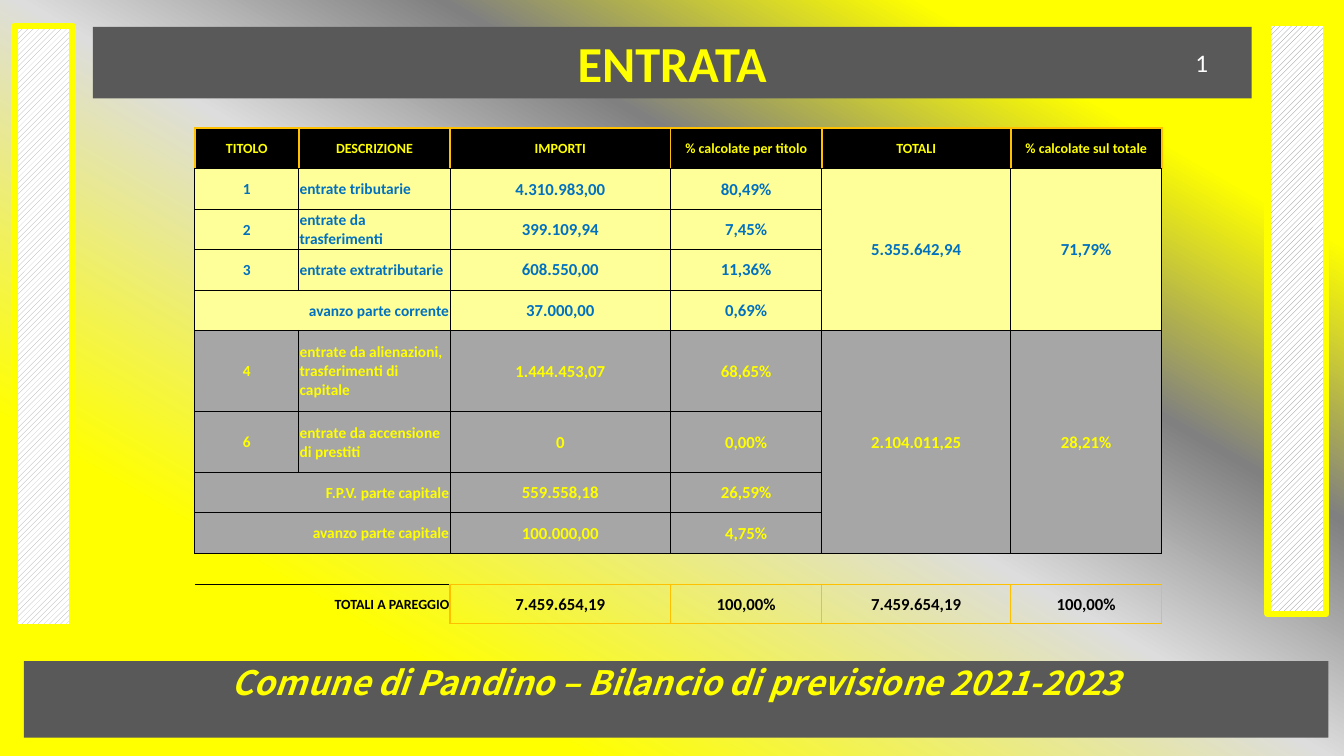
from dataclasses import dataclass

import pptx
import pptx.util
import pptx.oxml
import pptx.oxml.ns
import pptx.dml.color
import pptx.enum.dml
import pptx.enum.shapes
import pptx.enum.text
from pptx.util import Cm

TITLE = "ENTRATA"
FOOTER = "Comune di Pandino – Bilancio di previsione 2021-2023"
PAGE_NUMBER = "1"

HEADER = ("TITOLO", "DESCRIZIONE", "IMPORTI", "% calcolate per titolo", "TOTALI", "% calcolate sul totale")
CURRENT = [
    ("1", "entrate tributarie", "4.310.983,00", "80,49%", "5.355.642,94", "71,79%"),
    ("2", "entrate da trasferimenti", "399.109,94", "7,45%"),
    ("3", "entrate extratributarie", "608.550,00", "11,36%"),
    ("avanzo parte corrente", "", "37.000,00", "0,69%"),
]
CAPITAL = [
    ("4", "entrate da alienazioni, trasferimenti di capitale", "1.444.453,07", "68,65%", "2.104.011,25", "28,21%"),
    ("6", "entrate da accensione di prestiti", "0", "0,00%"),
    ("F.P.V. parte capitale", "", "559.558,18", "26,59%"),
    ("avanzo parte capitale", "", "100.000,00", "4,75%"),
]
BALANCE = ("TOTALI A PAREGGIO", "", "7.459.654,19", "100,00%", "7.459.654,19", "100,00%")

COLUMN_WIDTHS = (2.62, 3.81, 5.56, 3.81, 4.76, 3.81)
ROW_HEIGHTS = (1.02, 1.02, 1.02, 1.02, 1.02, 2.04, 1.53, 1.02, 1.02, 0.78, 0.97)
SIDE_BARS = [((0.36, 0.66, 1.47, 15.14), "A6A6A6"), ((31.95, 0.56, 1.47, 14.91), "808080")]


@dataclass(frozen=True)
class Theme:
    font: str = "Calibri"
    footer_font: str = "Noto Sans CJK KR"
    yellow: str = "FFFF00"
    band: str = "595959"
    black: str = "000000"
    white: str = "FFFFFF"
    blue: str = "0070C0"
    orange: str = "FFC000"
    current: str = "FFFF99"
    capital: str = "A6A6A6"
    backdrop: tuple = ((16, "FFFF00"), (34, "808080"), (50, "DDDDDD"), (78, "FFFF00"))
    title_size: int = 36
    footer_size: int = 24
    number_size: int = 18
    small: int = 10
    label: int = 11
    amount: int = 12


THEME = Theme()
ALIGN = pptx.enum.text.PP_ALIGN
MIDDLE = pptx.enum.text.MSO_ANCHOR.MIDDLE
LAST_COLUMN = len(HEADER) - 1
CURRENT_START = 1
CAPITAL_START = CURRENT_START + len(CURRENT)
SPACER = CAPITAL_START + len(CAPITAL)
TOTAL = SPACER + 1


def rgb(code):
    return pptx.dml.color.RGBColor.from_string(code)


def place(shape, left, top, width, height):
    shape.left, shape.top, shape.width, shape.height = Cm(left), Cm(top), Cm(width), Cm(height)


def write(frame, text, size, color, align=ALIGN.CENTER, font=THEME.font, bold=True):
    para = frame.paragraphs[0]
    para.alignment = align
    span = para.add_run()
    span.text = text
    span.font.name = font
    span.font.size = pptx.util.Pt(size)
    span.font.bold = bold
    span.font.color.rgb = rgb(color)
    return para, span


def paint_background(page):
    page.background.fill.solid()
    stops = "".join(
        f'<a:gs pos="{pos * 1000}"><a:srgbClr val="{color}"/></a:gs>' for pos, color in THEME.backdrop
    )
    gradient = pptx.oxml.parse_xml(
        f'<a:gradFill {pptx.oxml.ns.nsdecls("a")} rotWithShape="1"><a:gsLst>{stops}</a:gsLst>'
        '<a:lin ang="7200000" scaled="0"/></a:gradFill>'
    )
    solid = page.element.xpath(".//p:bgPr/a:solidFill")[0]
    solid.getparent().replace(solid, gradient)


def fill_band(shape):
    shape.fill.solid()
    shape.fill.fore_color.rgb = rgb(THEME.band)
    shape.text_frame.word_wrap = True
    shape.text_frame.auto_size = pptx.enum.text.MSO_AUTO_SIZE.NONE


def add_bands(page):
    title, footer = page.placeholders
    place(title, 2.34, 0.68, 29.2, 1.8)
    fill_band(title)
    title.text_frame.vertical_anchor = MIDDLE
    write(title.text_frame, TITLE, THEME.title_size, THEME.yellow)

    place(footer, 0.6, 16.66, 32.88, 1.93)
    fill_band(footer)
    footer.text_frame.vertical_anchor = pptx.enum.text.MSO_ANCHOR.TOP
    para, span = write(footer.text_frame, FOOTER, THEME.footer_size, THEME.yellow, font=THEME.footer_font)
    span.font.italic = True
    para.line_spacing = 0.9
    para.space_before = pptx.util.Pt(10)
    settings = para._p.get_or_add_pPr()
    settings.set("marL", "0")
    settings.set("indent", "0")
    settings.append(pptx.oxml.parse_xml(f'<a:buNone {pptx.oxml.ns.nsdecls("a")}/>'))


def add_side_bar(page, box, hatch):
    bar = page.shapes.add_shape(pptx.enum.shapes.MSO_SHAPE.RECTANGLE, *map(Cm, box))
    bar.shadow.inherit = False
    bar.fill.patterned()
    bar.fill.pattern = pptx.enum.dml.MSO_PATTERN.WIDE_UPWARD_DIAGONAL
    bar.fill.fore_color.rgb = rgb(hatch)
    bar.fill.back_color.rgb = rgb(THEME.white)
    bar.line.color.rgb = rgb(THEME.yellow)
    bar.line.width = pptx.util.Pt(4.75)


def cell_edges(row, column):
    black, orange = (THEME.black, 1), (THEME.orange, 1)
    if row == 0:
        heavy = (THEME.orange, 1.5)
        return {"L": heavy, "R": heavy, "T": heavy, "B": black}
    if row == SPACER:
        return {"T": black, "B": orange} if column > 1 else {"T": black}
    if row == TOTAL:
        return dict.fromkeys("LRTB", orange) if column > 1 else {"R": orange}
    thin = (THEME.black, 0.5)
    first = row in (CURRENT_START, CAPITAL_START)
    last = row in (CAPITAL_START - 1, SPACER - 1) or column > 3
    return {
        "L": black if column == 0 else thin,
        "R": black if column == LAST_COLUMN else thin,
        "T": black if first else thin,
        "B": black if last else thin,
    }


def draw_edges(cell, edges):
    properties = cell._tc.get_or_add_tcPr()
    for index, (side, (color, width)) in enumerate(edges.items()):
        properties.insert(index, pptx.oxml.parse_xml(
            f'<a:ln{side} {pptx.oxml.ns.nsdecls("a")} w="{int(width * 12700)}">'
            f'<a:solidFill><a:srgbClr val="{color}"/></a:solidFill></a:ln{side}>'
        ))


def row_colors(row):
    if row == 0:
        return THEME.black, THEME.yellow
    if row < CAPITAL_START:
        return THEME.current, THEME.blue
    if row < SPACER:
        return THEME.capital, THEME.yellow
    return None, THEME.black


def fill_cell(cell, row, column, text):
    fill, color = row_colors(row)
    cell.margin_left = cell.margin_right = cell.margin_top = Cm(0.02)
    cell.margin_bottom = 0
    cell.vertical_anchor = MIDDLE
    if fill:
        cell.fill.solid()
        cell.fill.fore_color.rgb = rgb(fill)
    else:
        cell.fill.background()
    if text:
        label_size = THEME.small if row == TOTAL else THEME.label
        size = THEME.small if row == 0 else label_size if column < 2 else THEME.amount
        align = ALIGN.CENTER
        if cell.is_merge_origin and column == 0:
            align = ALIGN.RIGHT
        elif row and column == 1:
            align = ALIGN.LEFT
        write(cell.text_frame, text, size, color, align)
    draw_edges(cell, cell_edges(row, column))


def add_budget_table(page):
    rows = [HEADER, *CURRENT, *CAPITAL, (), BALANCE]
    frame = page.shapes.add_table(
        len(rows), len(HEADER), Cm(4.91), Cm(3.23), Cm(sum(COLUMN_WIDTHS)), Cm(sum(ROW_HEIGHTS))
    )
    table = frame.table
    table.first_row = table.horz_banding = False
    table._tbl.xpath("./a:tblPr/a:tableStyleId")[0].text = "{2D5ABB26-0587-4C30-8999-92F81FD0307C}"
    for column, width in zip(table.columns, COLUMN_WIDTHS):
        column.width = Cm(width)
    for line, height in zip(table.rows, ROW_HEIGHTS):
        line.height = Cm(height)
    for start, group in ((CURRENT_START, CURRENT), (CAPITAL_START, CAPITAL)):
        for column in (4, 5):
            table.cell(start, column).merge(table.cell(start + len(group) - 1, column))
    for row, values in enumerate(rows):
        if values and not values[1]:
            table.cell(row, 0).merge(table.cell(row, 1))
        for column in range(len(HEADER)):
            cell = table.cell(row, column)
            if not cell.is_spanned:
                fill_cell(cell, row, column, values[column] if values else "")


def main():
    deck = pptx.Presentation()
    deck.slide_width, deck.slide_height = Cm(33.87), Cm(19.05)
    page = deck.slides.add_slide(deck.slide_layouts[1])
    paint_background(page)
    add_bands(page)
    for box, hatch in SIDE_BARS:
        add_side_bar(page, box, hatch)
    add_budget_table(page)
    number = page.shapes.add_textbox(Cm(29.46), Cm(1.07), Cm(1.65), Cm(1.02))
    number.text_frame.word_wrap = True
    write(number.text_frame, PAGE_NUMBER, THEME.number_size, THEME.white, bold=False)
    deck.save("out.pptx")


if __name__ == "__main__":
    main()
